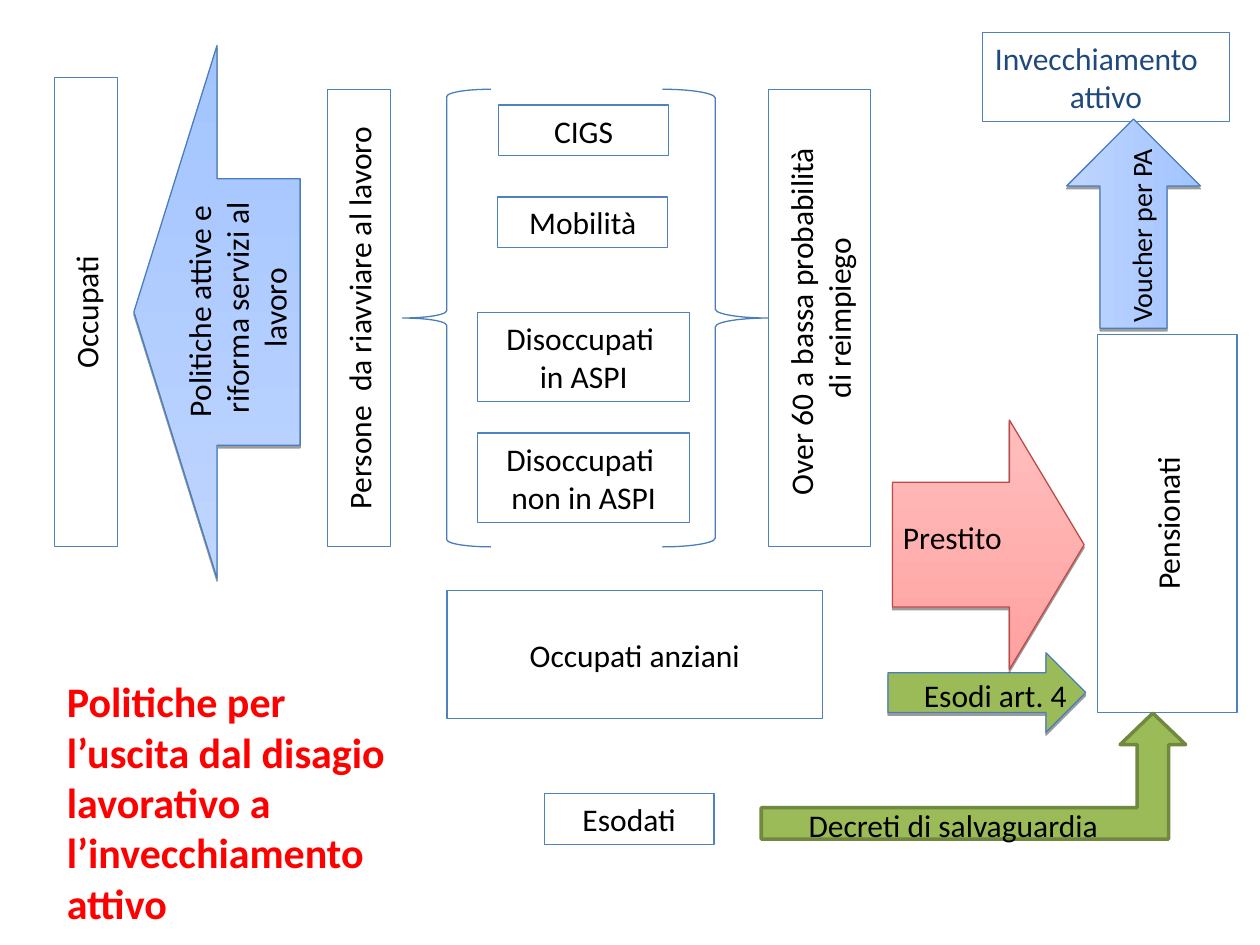
from dataclasses import dataclass
from typing import Optional

from lxml.etree import SubElement
from pptx import Presentation
from pptx.dml.color import RGBColor
from pptx.enum.shapes import MSO_SHAPE
from pptx.enum.text import MSO_ANCHOR, MSO_AUTO_SIZE, PP_ALIGN
from pptx.oxml.ns import qn
from pptx.util import Pt

BLACK = RGBColor(0x00, 0x00, 0x00)
RED = RGBColor(0xFF, 0x00, 0x00)
NAVY = RGBColor(0x1F, 0x49, 0x7D)
BOX_LINE = RGBColor(0x4F, 0x81, 0xBD)
ARROW_BLUE = RGBColor(0x4A, 0x7E, 0xBB)
ARROW_RED = RGBColor(0xBE, 0x4B, 0x48)
GREEN = RGBColor(0x9B, 0xBB, 0x59)
DARK_GREEN = RGBColor(0x71, 0x89, 0x3F)
BLUE_FILL = (RGBColor(0xA3, 0xC4, 0xFF), RGBColor(0xBF, 0xD5, 0xFF))
RED_FILL = (RGBColor(0xFF, 0xA2, 0xA1), RGBColor(0xFF, 0xBE, 0xBD))
GREEN_FILL = (GREEN,)

FONT = "Calibri"
LEFT, CENTER = PP_ALIGN.LEFT, PP_ALIGN.CENTER


@dataclass(frozen=True)
class Area:
    left: float
    top: float
    width: float
    height: float

    def lengths(self) -> tuple:
        return Pt(self.left), Pt(self.top), Pt(self.width), Pt(self.height)


@dataclass(frozen=True)
class Label:
    text: str
    area: Area
    boxed: bool = True
    direction: str = "horz"
    rotation: float = 0
    size: float = 18
    color: RGBColor = BLACK
    alignments: tuple = (CENTER, CENTER)
    indent: float = 7.2


@dataclass(frozen=True)
class Figure:
    kind: MSO_SHAPE
    area: Area
    line: RGBColor = ARROW_BLUE
    fill: tuple = ()
    rotation: float = 0
    adjustments: Optional[tuple] = None
    line_width: float = 0.75
    shadow: bool = True


BRACE_TOP, BRACE_HEIGHT = 51, 261.5
UPRIGHT = "vert270"

BOXES = [
    Label("CIGS", Area(285, 60, 97, 29)),
    Label("Mobilità", Area(284.5, 112.5, 97, 29)),
    Label("Disoccupati \nin ASPI", Area(273, 178.5, 121, 51)),
    Label("Disoccupati \nnon in ASPI", Area(273, 247.5, 121, 51)),
    Label("Esodati", Area(311, 453.5, 97, 29)),
    Label("Occupati anziani", Area(255.5, 337.5, 214.5, 73)),
    Label("Occupati", Area(31, 44.5, 36, 268), direction=UPRIGHT),
    Label("Persone  da riavviare al lavoro",
          Area(187, BRACE_TOP, 36, BRACE_HEIGHT), direction=UPRIGHT),
    Label("Over 60 a bassa probabilità \ndi reimpiego",
          Area(439, BRACE_TOP, 58.5, BRACE_HEIGHT), direction=UPRIGHT),
    Label("Pensionati", Area(627, 191, 80, 216), direction=UPRIGHT),
    Label("Invecchiamento\nattivo", Area(561.5, 18.5, 141, 51),
          color=NAVY, alignments=(LEFT, CENTER)),
]

FIGURES = [
    Figure(MSO_SHAPE.RIGHT_BRACE, Area(378.5, BRACE_TOP, 60.5, BRACE_HEIGHT), shadow=False),
    Figure(MSO_SHAPE.LEFT_BRACE, Area(230, BRACE_TOP, 50.5, BRACE_HEIGHT), shadow=False),
    Figure(MSO_SHAPE.RIGHT_ARROW, Area(76.5, 26, 95, 304.5), fill=BLUE_FILL, rotation=180),
    Figure(MSO_SHAPE.BENT_UP_ARROW, Area(435, 407.5, 242.5, 72), DARK_GREEN, GREEN_FILL,
           adjustments=(0.25, 0.26, 0.25), line_width=2, shadow=False),
    Figure(MSO_SHAPE.RIGHT_ARROW, Area(507.5, 373, 113, 45.5), fill=GREEN_FILL),
    Figure(MSO_SHAPE.RIGHT_ARROW, Area(510, 240, 109.5, 142.5), ARROW_RED, RED_FILL,
           adjustments=(0.5, 0.39)),
    Figure(MSO_SHAPE.RIGHT_ARROW, Area(588, 89.5, 119.5, 76.5), fill=BLUE_FILL, rotation=270),
]

CAPTIONS = [
    Label("Politiche attive e \nriforma servizi al lavoro", Area(44, 139.5, 182, 73),
          boxed=False, rotation=270),
    Label("Esodi art. 4", Area(507.5, 382.5, 122.5, 29), boxed=False),
    Label("Prestito", Area(496, 292.5, 124.5, 29), boxed=False,
          alignments=(LEFT,), indent=20),
    Label("Voucher per PA", Area(635, 73.5, 34, 122.5), boxed=False,
          direction="vert", rotation=180, size=16),
    Label("Decreti di salvaguardia", Area(455, 457, 196.5, 29), boxed=False,
          alignments=(LEFT,)),
]


def format_font(paragraph, size: float, color: RGBColor, bold: bool = False) -> None:
    for run in paragraph.runs:
        run.font.name = FONT
        run.font.size = Pt(size)
        run.font.bold = bold
        run.font.color.rgb = color


def draw_label(slide, label: Label) -> None:
    if label.boxed:
        shape = slide.shapes.add_shape(MSO_SHAPE.RECTANGLE, *label.area.lengths())
        shape.shadow.inherit = False
        shape.fill.background()
        shape.line.color.rgb = BOX_LINE
        shape.line.width = Pt(0.75)
    else:
        shape = slide.shapes.add_textbox(*label.area.lengths())
    shape.rotation = label.rotation
    text_frame = shape.text_frame
    text_frame.word_wrap = True
    text_frame.vertical_anchor = MSO_ANCHOR.MIDDLE
    text_frame.margin_left = Pt(label.indent)
    text_frame.text = label.text
    text_frame._txBody.bodyPr.set("vert", label.direction)
    for paragraph, alignment in zip(text_frame.paragraphs, label.alignments):
        paragraph.alignment = alignment
        format_font(paragraph, label.size, label.color)


def add_shadow(shape) -> None:
    effects = shape._element.spPr.find(qn("a:effectLst"))
    shadow = SubElement(effects, qn("a:outerShdw"), blurRad="0", dist=str(Pt(1.6)),
                        dir="5400000", rotWithShape="0")
    color = SubElement(shadow, qn("a:srgbClr"), val="000000")
    SubElement(color, qn("a:alpha"), val="38000")


def draw_figure(slide, figure: Figure) -> None:
    shape = slide.shapes.add_shape(figure.kind, *figure.area.lengths())
    shape.rotation = figure.rotation
    for index, value in enumerate(figure.adjustments or ()):
        shape.adjustments[index] = value
    if len(figure.fill) == 2:
        shape.fill.gradient()
        shape.fill.gradient_angle = 90
        for stop, color in zip(shape.fill.gradient_stops, figure.fill):
            stop.color.rgb = color
    elif figure.fill:
        shape.fill.solid()
        shape.fill.fore_color.rgb = figure.fill[0]
    else:
        shape.fill.background()
    shape.line.color.rgb = figure.line
    shape.line.width = Pt(figure.line_width)
    shape.shadow.inherit = False
    if figure.shadow:
        add_shadow(shape)


def format_title(slide) -> None:
    title = slide.shapes.title
    title.left, title.top, title.width, title.height = Area(31, 382.5, 199, 152.5).lengths()
    text_frame = title.text_frame
    text_frame.text = "Politiche per l’uscita dal disagio lavorativo a l’invecchiamento attivo"
    text_frame.word_wrap = True
    text_frame.auto_size = MSO_AUTO_SIZE.NONE
    text_frame.vertical_anchor = MSO_ANCHOR.TOP
    text_frame.paragraphs[0].alignment = LEFT
    format_font(text_frame.paragraphs[0], 24, RED, bold=True)


def main() -> None:
    presentation = Presentation()
    presentation.slide_width, presentation.slide_height = Pt(720), Pt(540)
    slide = presentation.slides.add_slide(presentation.slide_layouts[5])
    format_title(slide)
    for box in BOXES:
        draw_label(slide, box)
    for figure in FIGURES:
        draw_figure(slide, figure)
    for caption in CAPTIONS:
        draw_label(slide, caption)
    presentation.save("out.pptx")


if __name__ == "__main__":
    main()
